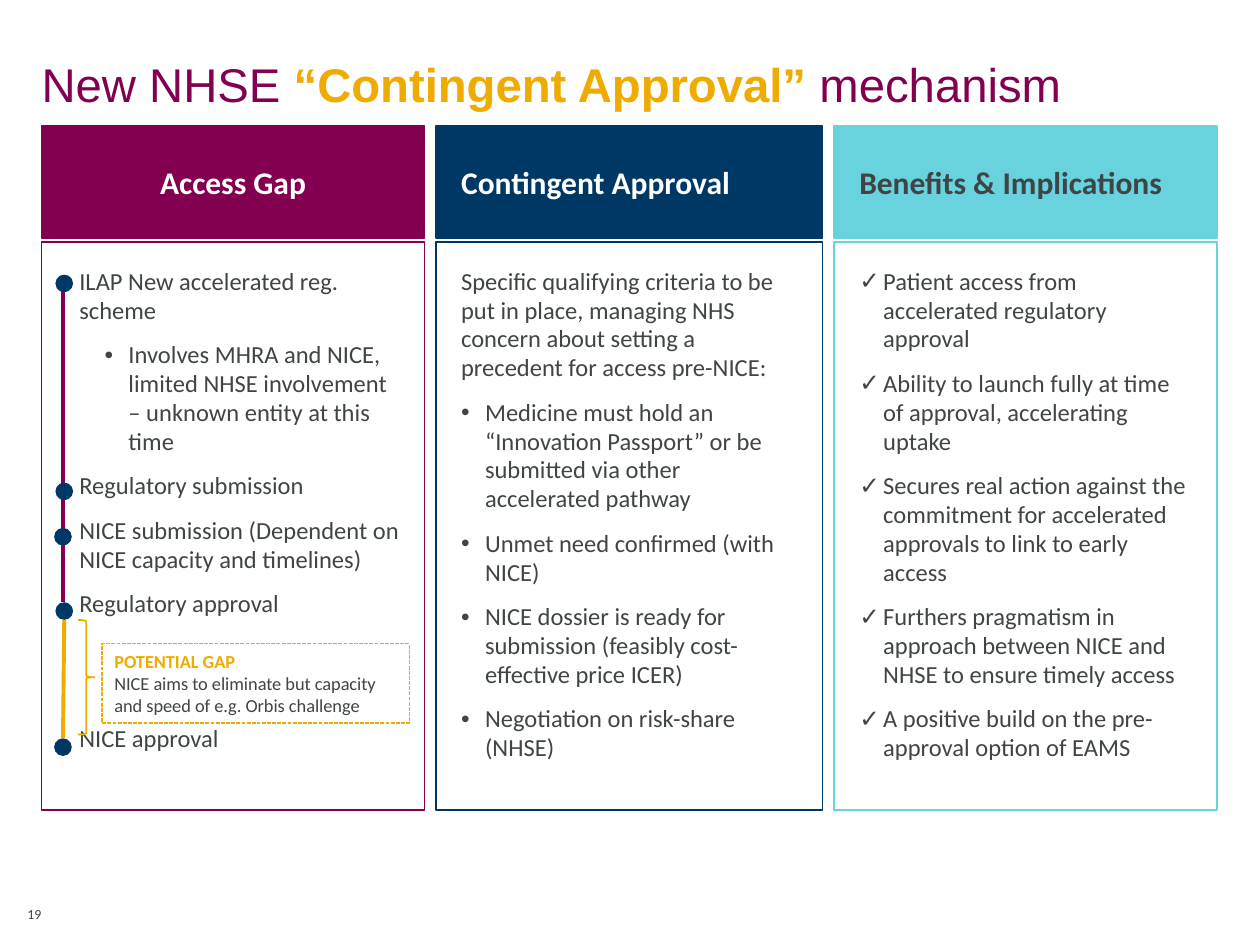
"""Build the slide on the contingent approval mechanism."""
from dataclasses import dataclass
from typing import Any, Optional

import pptx
import pptx.dml.color
import pptx.enum.dml
import pptx.enum.shapes
import pptx.enum.text
import pptx.oxml.ns
import pptx.util
from lxml import etree

Inches = pptx.util.Inches
Pt = pptx.util.Pt
Shapes = pptx.enum.shapes.MSO_SHAPE
Anchor = pptx.enum.text.MSO_ANCHOR
Align = pptx.enum.text.PP_ALIGN


@dataclass(frozen=True)
class Theme:
    plum: str = "830051"
    navy: str = "003865"
    aqua: str = "68D2DF"
    gold: str = "F0AB00"
    ink: str = "3F4444"
    white: str = "FFFFFF"
    head_font: str = "Arial"
    body_font: str = "Calibri"
    title: float = 27
    header: float = 18
    body: float = 14
    note: float = 10.5
    number: float = 7.9


T = Theme()


@dataclass(frozen=True)
class Item:
    text: str
    bullet: str = ""
    margin: float = 0
    before: float = 0


@dataclass(frozen=True)
class Column:
    left: float
    width: float
    heading: str
    color: str
    heading_color: str
    align: Any
    items: list[Item]


def bulleted(char: str, *texts: str) -> list[Item]:
    return [Item(text, char, 0.19) for text in texts]


COLUMNS = [
    Column(0.33, 3.04, "Access Gap", T.plum, T.white, Align.CENTER, [
        Item("ILAP New accelerated reg. scheme", margin=0.1),
        Item("Involves MHRA and NICE, limited NHSE involvement – unknown entity at this time", "•", 0.49),
        Item("Regulatory submission", margin=0.1),
        Item("NICE submission (Dependent on NICE capacity and timelines)", margin=0.1),
        Item("Regulatory approval", margin=0.1),
        Item("NICE approval", margin=0.1, before=51.6),
    ]),
    Column(3.46, 3.07, "Contingent Approval", T.navy, T.white, Align.LEFT, [
        Item("Specific qualifying criteria to be put in place, managing NHS concern "
             "about setting a precedent for access pre-NICE:"),
        *bulleted(
            "•",
            "Medicine must hold an “Innovation Passport” or be submitted via other accelerated pathway",
            "Unmet need confirmed (with NICE)",
            "NICE dossier is ready for submission (feasibly cost-effective price ICER)",
            "Negotiation on risk-share (NHSE)"),
    ]),
    Column(6.62, 3.04, "Benefits & Implications", T.aqua, T.ink, Align.LEFT, bulleted(
        "✓",
        "Patient access from accelerated regulatory approval",
        "Ability to launch fully at time of approval, accelerating uptake",
        "Secures real action against the commitment for accelerated approvals to link to early access",
        "Furthers pragmatism in approach between NICE and NHSE to ensure timely access",
        "A positive build on the pre-approval option of EAMS")),
]
MILESTONES = [(0.44, 2.18), (0.44, 3.83), (0.43, 4.19), (0.44, 4.78), (0.43, 5.86)]
DOT = 0.14


def rgb(value: str) -> pptx.dml.color.RGBColor:
    return pptx.dml.color.RGBColor.from_string(value)


def add_text(p: Any, text: str, *, size: float, color: str, bold: bool = False,
             font: str = T.body_font) -> None:
    r = p.add_run()
    r.text = text
    r.font.name, r.font.size, r.font.bold = font, Pt(size), bold
    r.font.color.rgb = rgb(color)


def set_frame(tf: Any, insets: tuple[float, float, float, float], anchor: Any = Anchor.TOP) -> None:
    tf.word_wrap = True
    tf.auto_size = pptx.enum.text.MSO_AUTO_SIZE.NONE
    tf.vertical_anchor = anchor
    tf.margin_left, tf.margin_top, tf.margin_right, tf.margin_bottom = map(Inches, insets)


def add_box(s: Any, kind: Any, left: float, top: float, width: float, height: float, *,
            fill: Optional[str] = None, line: Optional[str] = None, weight: float = 0.75) -> Any:
    sp = s.shapes.add_shape(kind, Inches(left), Inches(top), Inches(width), Inches(height))
    sp.shadow.inherit = False
    if fill:
        sp.fill.solid()
        sp.fill.fore_color.rgb = rgb(fill)
    else:
        sp.fill.background()
    if line:
        sp.line.color.rgb = rgb(line)
        sp.line.width = Pt(weight)
    else:
        sp.line.fill.background()
    return sp


def add_line(s: Any, x1: float, y1: float, x2: float, y2: float, color: str) -> None:
    cxn = s.shapes.add_connector(pptx.enum.shapes.MSO_CONNECTOR.STRAIGHT,
                                 Inches(x1), Inches(y1), Inches(x2), Inches(y2))
    cxn.line.color.rgb = rgb(color)
    cxn.line.width = Pt(2.25)
    etree.SubElement(cxn._element.spPr, pptx.oxml.ns.qn("a:effectLst"))


def add_item(p: Any, item: Item) -> None:
    p.alignment = Align.LEFT
    p.line_spacing = 0.98
    p.space_before, p.space_after = Pt(item.before), Pt(9)
    pPr = p._p.get_or_add_pPr()
    pPr.set("marL", str(Inches(item.margin)))
    pPr.set("indent", str(Inches(-0.19 if item.bullet else 0)))
    if item.bullet:
        etree.SubElement(pPr, pptx.oxml.ns.qn("a:buFont"), typeface=T.head_font)
        etree.SubElement(pPr, pptx.oxml.ns.qn("a:buChar"), char=item.bullet)
    add_text(p, item.text, size=T.body, color=T.ink)


def add_column(s: Any, col: Column) -> None:
    tf = add_box(s, Shapes.RECTANGLE, col.left, 1.92, col.width, 4.51, line=col.color).text_frame
    set_frame(tf, (0.2, 0.2, 0.2, 0.2))
    for i, item in enumerate(col.items):
        add_item(tf.add_paragraph() if i else tf.paragraphs[0], item)
    tf = add_box(s, Shapes.RECTANGLE, col.left, 1, col.width, 0.89,
                 fill=col.color, line=col.color).text_frame
    set_frame(tf, (0.2, 0.05, 0.2, 0.05), Anchor.MIDDLE)
    p = tf.paragraphs[0]
    p.alignment = col.align
    add_text(p, col.heading, size=T.header, color=col.heading_color, bold=True)


def add_title(s: Any) -> None:
    sp = s.shapes.title
    sp.left, sp.top, sp.width, sp.height = map(Inches, (0.33, 0.44, 9.33, 1.1))
    set_frame(sp.text_frame, (0, 0, 0, 0))
    p = sp.text_frame.paragraphs[0]
    p.alignment = Align.LEFT
    for text, color, bold in (("New NHSE ", T.plum, False), ("“Contingent Approval” ", T.gold, True),
                              ("mechanism", T.plum, False)):
        add_text(p, text, size=T.title, color=color, bold=bold, font=T.head_font)


def add_gap_note(s: Any) -> None:
    sp = add_box(s, Shapes.RECTANGLE, 0.81, 5.11, 2.44, 0.63, line=T.gold)
    sp.line.dash_style = pptx.enum.dml.MSO_LINE.SQUARE_DOT
    set_frame(sp.text_frame, (0.1, 0.05, 0.1, 0.05))
    p = sp.text_frame.paragraphs[0]
    p.alignment = Align.LEFT
    add_text(p, "POTENTIAL GAP", size=T.note, color=T.gold, bold=True)
    p.add_line_break()
    add_text(p, "NICE aims to eliminate but capacity and speed of e.g. Orbis challenge",
             size=T.note, color=T.ink)
    add_box(s, Shapes.RIGHT_BRACE, 0.62, 4.92, 0.13, 0.91, line=T.gold, weight=1)


def add_timeline(s: Any) -> None:
    add_line(s, 0.5, 2.31, 0.5, 4.78, T.plum)
    for left, top in MILESTONES:
        add_box(s, Shapes.OVAL, left, top, DOT, DOT, fill=T.navy)
    add_line(s, 0.51, 4.92, 0.5, 5.86, T.gold)


def add_number(s: Any) -> None:
    tf = s.shapes.add_textbox(0, Inches(7.06), Inches(0.33), Inches(0.34)).text_frame
    set_frame(tf, (0, 0, 0, 0.08), Anchor.BOTTOM)
    tf.paragraphs[0].alignment = Align.RIGHT
    add_text(tf.paragraphs[0], "19", size=T.number, color=T.ink)


def main() -> None:
    prs = pptx.Presentation()
    prs.slide_width, prs.slide_height = Inches(10), Inches(7.5)
    s = prs.slides.add_slide(prs.slide_layouts[5])
    add_title(s)
    for col in COLUMNS:
        add_column(s, col)
    add_number(s)
    add_gap_note(s)
    add_timeline(s)
    prs.save("out.pptx")


if __name__ == "__main__":
    main()
